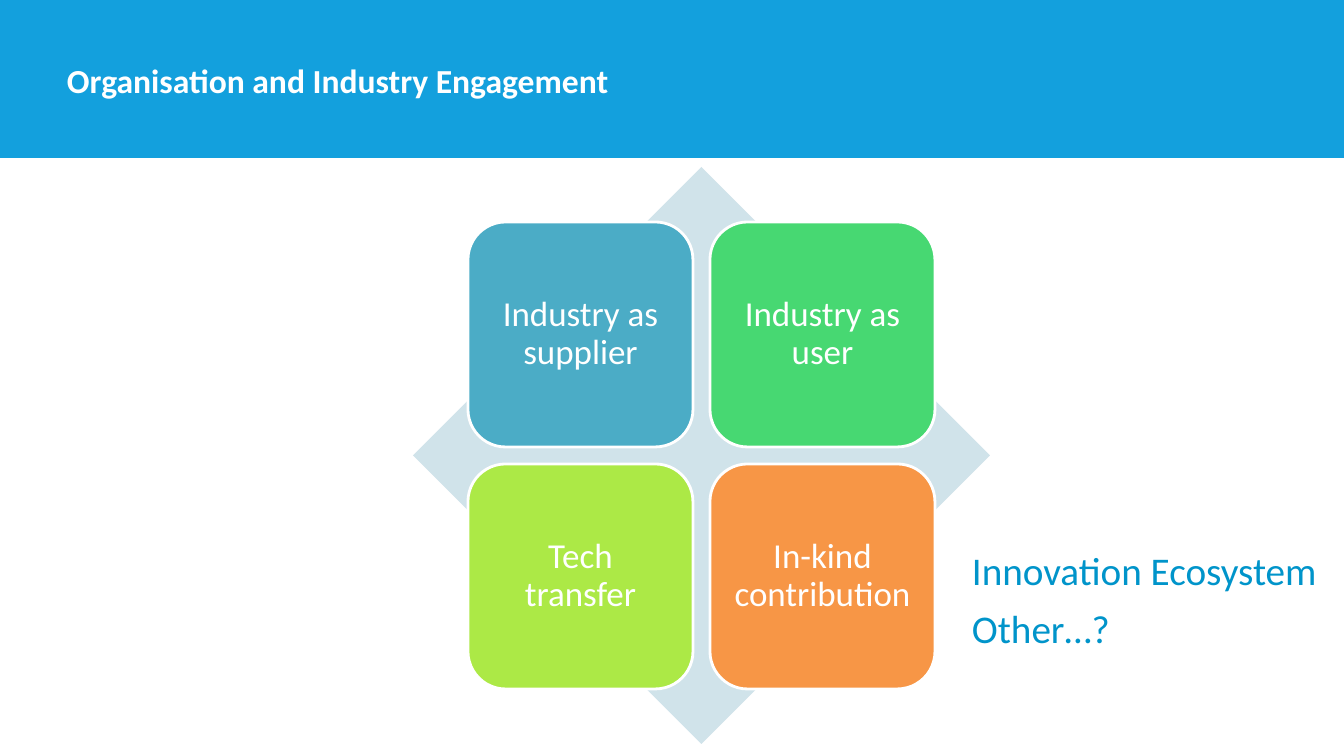
from pptx import Presentation
from pptx.dml.color import RGBColor
from pptx.enum.shapes import MSO_SHAPE
from pptx.enum.text import MSO_ANCHOR, PP_ALIGN
from pptx.util import Emu, Pt

RECTANGLE, DIAMOND = MSO_SHAPE.RECTANGLE, MSO_SHAPE.DIAMOND
ROUNDED = MSO_SHAPE.ROUNDED_RECTANGLE
TOP, MIDDLE, BOTTOM = MSO_ANCHOR.TOP, MSO_ANCHOR.MIDDLE, MSO_ANCHOR.BOTTOM
CENTER = PP_ALIGN.CENTER

WHITE = RGBColor(0xFF, 0xFF, 0xFF)
HEADER_BLUE = RGBColor(0x13, 0xA0, 0xDD)
TEXT_BLUE = RGBColor(0x00, 0x94, 0xCA)
PALE_BLUE = RGBColor(0xD0, 0xE3, 0xEA)
TEAL = RGBColor(0x4B, 0xAC, 0xC6)
GREEN = RGBColor(0x47, 0xD8, 0x72)
LIME = RGBColor(0xAC, 0xE9, 0x46)
ORANGE = RGBColor(0xF7, 0x96, 0x46)

FONT = "Calibri"
WIDTH, HEIGHT = 1344, 756
TILES = [
    ("Industry as supplier", TEAL),
    ("Industry as user", GREEN),
    ("Tech transfer", LIME),
    ("In-kind contribution", ORANGE),
]


def px(length):
    return Emu(round(length * 914400 / 100.8))


def add_block(slide, kind, box, color):
    shape = slide.shapes.add_shape(kind, *map(px, box))
    shape.shadow.inherit = False
    shape.fill.solid()
    shape.fill.fore_color.rgb = color
    shape.line.fill.background()
    return shape


def set_frame(frame, anchor, margin):
    frame.word_wrap = True
    frame.vertical_anchor = anchor
    frame.margin_left = frame.margin_right = px(margin)
    frame.margin_top = frame.margin_bottom = px(margin)


def add_run(paragraph, text, size, color, bold=False):
    run = paragraph.add_run()
    run.text = text
    run.font.name = FONT
    run.font.size = Pt(size)
    run.font.bold = bold
    run.font.color.rgb = color


def add_header(slide, box, title):
    left, top, width, height = box
    add_block(slide, RECTANGLE, box, HEADER_BLUE)
    title_box = slide.shapes.add_textbox(
        px(left + 67), px(top + 38), px(width - 295), px(62))
    set_frame(title_box.text_frame, BOTTOM, 0)
    add_run(title_box.text_frame.paragraphs[0], title, 24, WHITE, bold=True)


def add_matrix(slide, box, tiles):
    left, top, width, height = box
    add_block(slide, DIAMOND, box, PALE_BLUE)
    # Two by two tiles, centred on the diamond
    side, gap = 225, 17
    inset = (width - 2 * side - gap) // 2
    for index, (label, color) in enumerate(tiles):
        row, column = divmod(index, 2)
        tile = add_block(slide, ROUNDED, (
            left + inset + column * (side + gap),
            top + inset + row * (side + gap), side, side), color)
        tile.line.color.rgb = WHITE
        tile.line.width = Pt(2)
        set_frame(tile.text_frame, MIDDLE, 10)
        paragraph = tile.text_frame.paragraphs[0]
        paragraph.alignment = CENTER
        paragraph.line_spacing = 0.9
        add_run(paragraph, label, 25, WHITE)


def add_side_notes(slide, box, notes):
    frame = slide.shapes.add_textbox(*map(px, box)).text_frame
    set_frame(frame, TOP, 0)
    for index, note in enumerate(notes):
        paragraph = frame.add_paragraph() if index else frame.paragraphs[0]
        paragraph.line_spacing = Pt(24)
        paragraph.space_before = Pt(5.6 if index else 0)
        paragraph.space_after = Pt(12)
        add_run(paragraph, note, 28, TEXT_BLUE)


def main():
    presentation = Presentation()
    presentation.slide_width, presentation.slide_height = px(WIDTH), px(HEIGHT)
    slide = presentation.slides.add_slide(presentation.slide_layouts[6])
    add_header(slide, (0, 0, WIDTH, 158), "Organisation and Industry Engagement")
    add_matrix(slide, (413, 167, 577, 577), TILES)
    add_side_notes(slide, (972, 560, 372, 120),
                   ["Innovation Ecosystem", "Other…?"])
    presentation.save("out.pptx")


if __name__ == "__main__":
    main()
